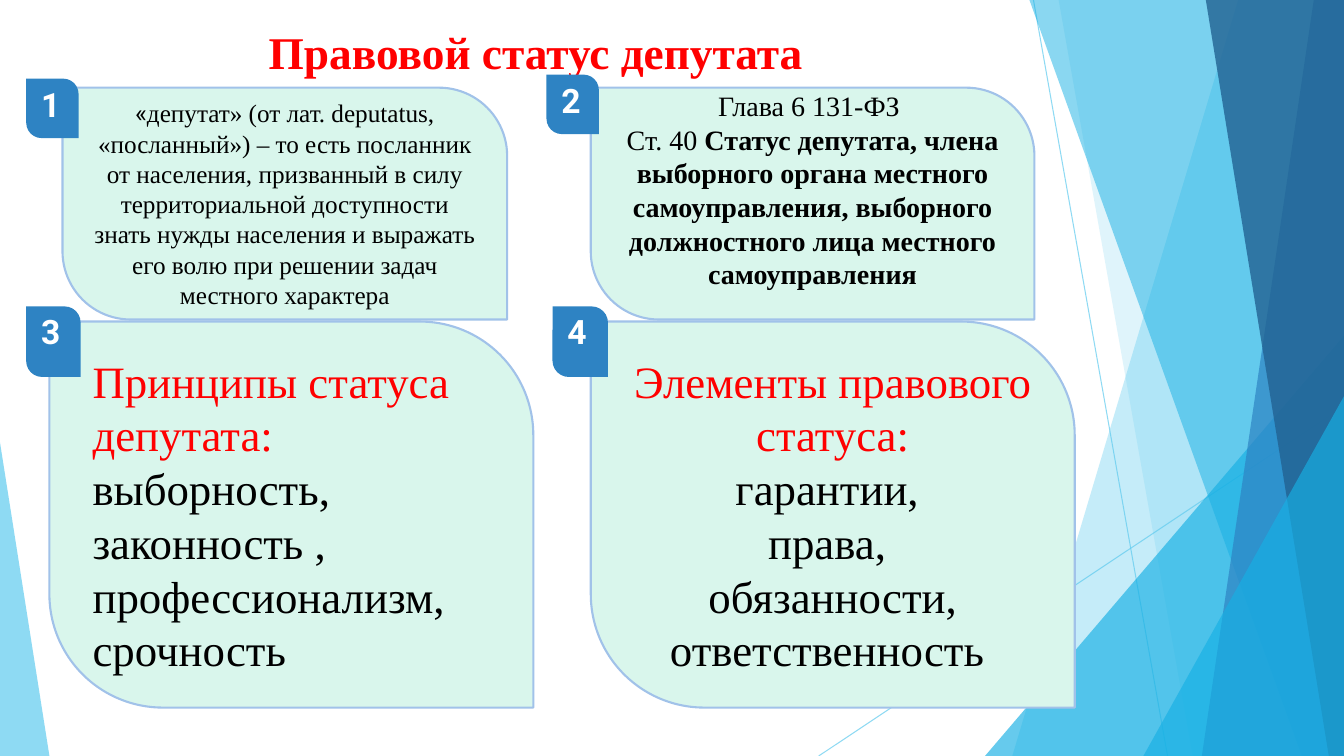
from lxml.etree import SubElement
from pptx import Presentation
from pptx.dml.color import RGBColor
from pptx.enum.shapes import MSO_CONNECTOR, MSO_SHAPE
from pptx.enum.text import MSO_ANCHOR, PP_ALIGN
from pptx.oxml.ns import qn
from pptx.util import Inches, Pt

SERIF = "Times New Roman"
RED, BLACK, WHITE = "FF0000", "000000", "FFFFFF"
SKY, CYAN, BLUE, NAVY = "5FCBEF", "17B0E4", "2E83C3", "226292"
MINT, CARD_EDGE = "D9F6EC", "A1C2E9"
RIGHT, BOTTOM = 13.33, 7.5

RAYS = [((10.25, 0), (11.58, BOTTOM)), ((RIGHT, 4.03), (8.12, BOTTOM))]

# Facets in stacking order: top-left x, bottom-left x, colour, opacity; or a corner triangle box.
FACETS = [
    ("band", (12.28, 10.04), SKY, 36),
    ("band", (10.5, 11.83), SKY, 20),
    ("right corner", (9.77, 3.33, 3.56, 4.17), CYAN, 66),
    ("band", (10.21, 12.91), CYAN, 50),
    ("band", (13.03, 11.92), BLUE, 70),
    ("band", (11.96, 13.18), NAVY, 80),
    ("right corner", (11.34, 3.93, 1.99, 3.57), CYAN, 66),
    ("left corner", (0, 4.39, 0.49, 3.11), SKY, 70),
]

PRINCIPLES = [
    [("Принципы статуса депутата:", {"color": RED})],
    [("выборность, законность , профессионализм, срочность", {})],
]
ELEMENTS = [
    [("Элементы правового статуса:", {"color": RED})],
    [("гарантии, ", {})],
    [("права, ", {})],
    [("обязанности, ответственность ", {})],
]
DEFINITION = [[
    ("«", {"font": "Roboto"}),
    ("депутат» (от лат. deputatus, «посланный») – то есть посланник от населения, "
     "призванный в силу территориальной доступности знать нужды населения и "
     "выражать его волю при решении задач местного характера", {}),
]]
LAW = [
    [("Глава 6 131-ФЗ ", {})],
    [("Ст. 40 ", {}),
     ("Статус депутата, члена выборного органа местного самоуправления, "
      "выборного должностного лица местного самоуправления", {"bold": True})],
]

# Number, badge box, card box, paragraphs, text format.
CARDS = [
    ("3", (0.26, 3.04, 0.54, 0.7), (0.49, 3.19, 4.8, 3.83), PRINCIPLES,
     {"size": 32, "align": PP_ALIGN.LEFT}),
    ("4", (5.48, 3.04, 0.55, 0.7), (5.86, 3.19, 4.8, 3.83), ELEMENTS, {"size": 32}),
    ("1", (0.26, 0.78, 0.52, 0.59), (0.62, 0.87, 4.41, 2.3), DEFINITION, {"size": 18}),
    ("2", (5.42, 0.74, 0.52, 0.59), (5.86, 0.87, 4.4, 2.3), LAW,
     {"size": 20, "bottom": 0.33}),
]


def paint(color_format, color, opacity=100):
    """Set a colour from a hex string, with opacity in percent."""
    color_format.rgb = RGBColor.from_string(color)
    if opacity < 100:
        for tone in color_format._xFill.iter(qn("a:srgbClr")):
            SubElement(tone, qn("a:alpha")).set("val", str(opacity * 1000))


def style(shape, fill, opacity=100, edge=None):
    """Give a shape its fill and an optional edge, without shadow."""
    shape.shadow.inherit = False
    shape.fill.solid()
    paint(shape.fill.fore_color, fill, opacity)
    if edge:
        paint(shape.line.color, edge)
        shape.line.width = Pt(1.5)
    else:
        shape.line.fill.background()


def write(shape, paragraphs, size, font=SERIF, color=BLACK, bold=False,
          align=PP_ALIGN.CENTER, anchor=MSO_ANCHOR.MIDDLE, wrap=True, bottom=0.05):
    """Write paragraphs of (text, overrides) runs into a shape."""
    frame = shape.text_frame
    frame.word_wrap = wrap
    frame.vertical_anchor = anchor
    frame.margin_bottom = Inches(bottom)
    for index, runs in enumerate(paragraphs):
        paragraph = frame.add_paragraph() if index else frame.paragraphs[0]
        paragraph.alignment = align
        for text, override in runs:
            run = paragraph.add_run()
            run.text = text
            run.font.size = Pt(size)
            run.font.name = override.get("font", font)
            run.font.bold = override.get("bold", bold)
            paint(run.font.color, override.get("color", color))


def add_ray(slide, start, end):
    """Draw a thin translucent line."""
    ray = slide.shapes.add_connector(
        MSO_CONNECTOR.STRAIGHT, *(Inches(length) for length in start + end))
    paint(ray.line.color, SKY, 70)
    ray.line.width = Pt(0.75)
    SubElement(ray._element.spPr, qn("a:effectLst"))


def add_facet(slide, kind, geometry, color, opacity):
    """Draw a translucent band to the right edge, or a corner triangle."""
    if kind == "band":
        top, bottom = geometry
        outline = slide.shapes.build_freeform(Inches(top), Inches(0))
        corners = [(RIGHT, 0), (RIGHT, BOTTOM), (bottom, BOTTOM)]
        outline.add_line_segments([(Inches(x), Inches(y)) for x, y in corners])
        facet = outline.convert_to_shape()
    else:
        facet = slide.shapes.add_shape(
            MSO_SHAPE.ISOSCELES_TRIANGLE, *map(Inches, geometry))
        facet.adjustments[0] = 1 if kind == "right corner" else 0
    style(facet, color, opacity)


def add_leaf(slide, box, fill, edge=None):
    """Draw a rectangle with two opposite corners rounded."""
    leaf = slide.shapes.add_shape(
        MSO_SHAPE.ROUND_2_DIAG_RECTANGLE, *map(Inches, box))
    leaf.adjustments[0] = 0
    leaf.adjustments[1] = 0.294
    style(leaf, fill, edge=edge)
    return leaf


def add_label(slide, box, text, **text_format):
    """Add a text box with one line."""
    label = slide.shapes.add_textbox(*map(Inches, box))
    write(label, [[(text, {})]], **text_format)


def add_card(slide, number, badge, box, paragraphs, text_format):
    """Add a card with its numbered badge."""
    write(add_leaf(slide, box, MINT, CARD_EDGE), paragraphs, **text_format)
    add_leaf(slide, badge, BLUE)
    left, top = badge[:2]
    add_label(slide, (left + 0.05, top, 0.44, 0.57), number, size=24, font="Roboto",
              color=WHITE, bold=True, align=PP_ALIGN.LEFT,
              anchor=MSO_ANCHOR.TOP, wrap=False)


def main():
    """Build the slide and save it."""
    deck = Presentation()
    deck.slide_width, deck.slide_height = Inches(RIGHT), Inches(BOTTOM)
    slide = deck.slides.add_slide(deck.slide_layouts[6])
    for ray in RAYS:
        add_ray(slide, *ray)
    for facet in FACETS:
        add_facet(slide, *facet)
    add_label(slide, (0.67, 0.16, 9.4, 0.69), "Правовой статус депутата ",
              size=32.4, color=RED, bold=True)
    for card in CARDS:
        add_card(slide, *card)
    deck.save("out.pptx")


if __name__ == "__main__":
    main()
